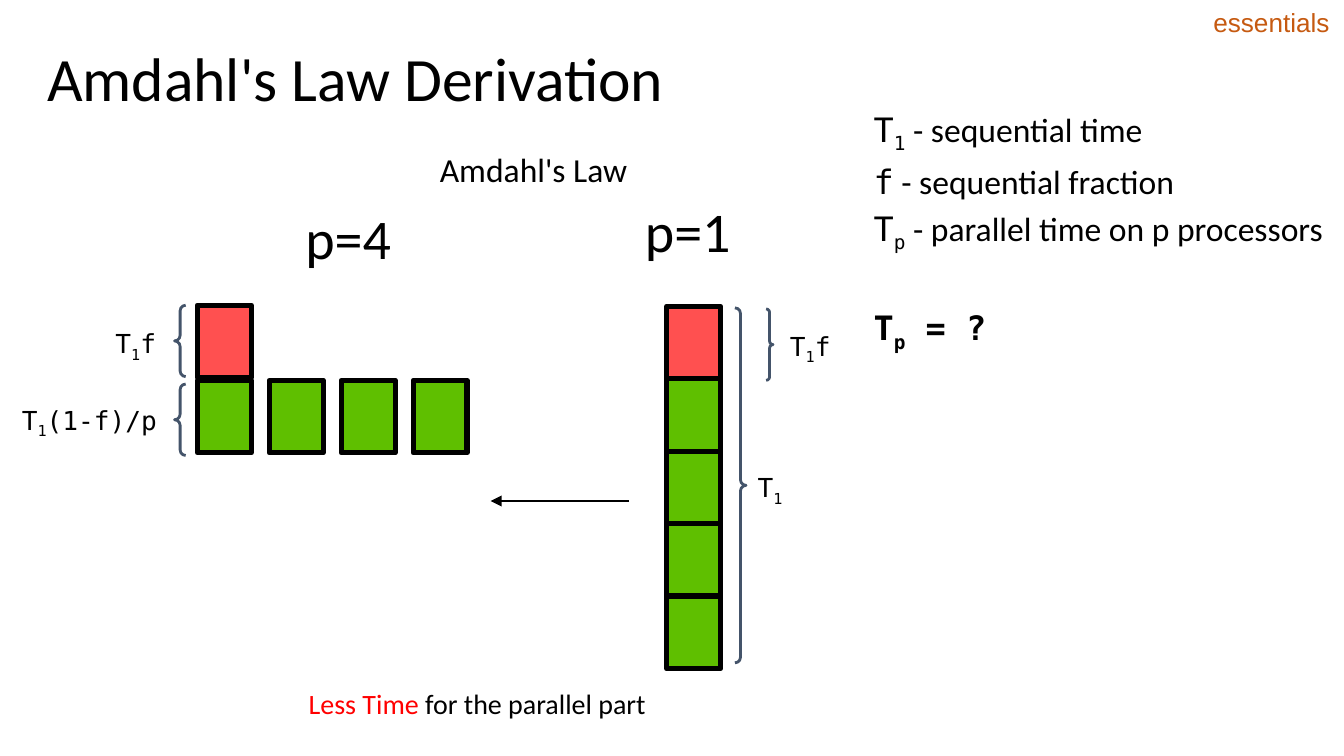
"""Build the Amdahl's Law derivation slide."""
from dataclasses import dataclass

from lxml.etree import SubElement
from pptx import Presentation
from pptx.dml.color import RGBColor
from pptx.enum.shapes import MSO_CONNECTOR, MSO_SHAPE
from pptx.enum.text import MSO_ANCHOR, PP_ALIGN
from pptx.oxml.ns import qn
from pptx.util import Cm, Pt


@dataclass(frozen=True)
class Theme:
    black: RGBColor = RGBColor.from_string("000000")
    sequential: RGBColor = RGBColor.from_string("FF5050")
    parallel: RGBColor = RGBColor.from_string("5FBF00")
    brace: RGBColor = RGBColor.from_string("44546A")
    emphasis: RGBColor = RGBColor.from_string("FF0000")
    tag: RGBColor = RGBColor.from_string("C65A11")
    sans: str = "Calibri"
    mono: str = "DejaVu Sans Mono"
    tag_font: str = "Arial"
    title: Pt = Pt(33)
    heading: Pt = Pt(30)
    body: Pt = Pt(18)
    note: Pt = Pt(15)
    label: Pt = Pt(14)
    thin: Pt = Pt(1.5)
    thick: Pt = Pt(2.83)


theme = Theme()
deck = Presentation()
deck.slide_width, deck.slide_height = Cm(25.4), Cm(14.29)
slide = deck.slides.add_slide(deck.slide_layouts[6])


def add_text(box, lines, size, align=PP_ALIGN.LEFT, spacing=1.0, inset=(0.18, 0.08), wrap=True):
    """Add a text box; each line is a list of (text, font, colour, is_subscript) runs."""
    frame = slide.shapes.add_textbox(*map(Cm, box)).text_frame
    frame.word_wrap = wrap
    frame.margin_left = frame.margin_right = Cm(inset[0])
    frame.margin_top = frame.margin_bottom = Cm(inset[1])
    for index, pieces in enumerate(lines):
        paragraph = frame.paragraphs[0] if index == 0 else frame.add_paragraph()
        paragraph.alignment, paragraph.line_spacing = align, spacing
        for text, font, color, is_subscript in pieces:
            run = paragraph.add_run()
            run.text = text
            run.font.name, run.font.size = font, size
            run.font.color.rgb = color
            if is_subscript:
                run.font._element.set("baseline", "-25000")
    return frame


def symbol(base, subscript="", rest="", rest_font=theme.mono):
    """Return the runs of a monospaced symbol, its subscript and what follows."""
    pieces = [
        (base, theme.mono, theme.black, False),
        (subscript, theme.mono, theme.black, True),
        (rest, rest_font, theme.black, False),
    ]
    return [piece for piece in pieces if piece[0]]


title = add_text((0.71, 0, 23.98, 3.1), [[("Amdahl's Law Derivation", theme.sans, theme.black, False)]],
                 theme.title, spacing=0.9, inset=(0.18, 0.18))
title.vertical_anchor = MSO_ANCHOR.MIDDLE

definitions = add_text(
    (16.33, 1.85, 10.03, 12.93),
    [
        symbol("T", "1", " - sequential time", theme.sans),
        symbol("f", "", " - sequential fraction", theme.sans),
        symbol("T", "p", " - parallel time on p processors", theme.sans),
        symbol("T", "p", " = ?"),
    ],
    theme.body, spacing=1.15)
question = definitions.paragraphs[-1]
question.space_before = Pt(25)
for run in question.runs:
    run.font.bold = True

for text, box, size, align in (
    ("p=1", (12.01, 3.63, 2.31, 1.47), theme.heading, PP_ALIGN.LEFT),
    ("p=4", (5.59, 3.76, 2.08, 1.47), theme.heading, PP_ALIGN.LEFT),
    ("Amdahl's Law", (6.96, 2.74, 6.25, 0.94), theme.body, PP_ALIGN.CENTER),
):
    add_text(box, [[(text, theme.sans, theme.black, False)]], size, align)

add_text((4.55, 12.88, 8.94, 0.84),
         [[("Less Time ", theme.sans, theme.emphasis, False),
           ("for the parallel part", theme.sans, theme.black, False)]],
         theme.note, PP_ALIGN.CENTER, inset=(0.18, 0.1))
add_text((22.68, 0, 2.72, 0.86), [[("essentials", theme.tag_font, theme.tag, False)]],
         theme.label, inset=(0.25, 0.13), wrap=False)

block_width, block_height = 1.02, 1.37
blocks = [(3.73, 5.77, theme.sequential), (12.6, 5.79, theme.sequential)]
blocks += [(3.73 + 1.36 * processor, 7.19, theme.parallel) for processor in range(4)]
blocks += [(12.6, 5.79 + block_height * step, theme.parallel) for step in range(1, 5)]
for left, top, color in blocks:
    block = slide.shapes.add_shape(MSO_SHAPE.RECTANGLE, Cm(left), Cm(top), Cm(block_width), Cm(block_height))
    block.shadow.inherit = False
    block.fill.solid()
    block.fill.fore_color.rgb = color
    block.line.color.rgb = theme.black
    block.line.width = theme.thick

for kind, box in (
    (MSO_SHAPE.LEFT_BRACE, (3.3, 5.77, 0.21, 1.35)),
    (MSO_SHAPE.LEFT_BRACE, (3.3, 7.26, 0.21, 1.35)),
    (MSO_SHAPE.RIGHT_BRACE, (14.48, 5.84, 0.13, 1.35)),
    (MSO_SHAPE.RIGHT_BRACE, (13.89, 5.82, 0.21, 6.71)),
):
    brace = slide.shapes.add_shape(kind, *map(Cm, box))
    brace.adjustments[0] = 0.5
    brace.shadow.inherit = False
    brace.fill.background()
    brace.line.color.rgb = theme.brace
    brace.line.width = theme.thin

for pieces, box, align in (
    (symbol("T", "1"), (14.07, 8.56, 1.24, 1.47), PP_ALIGN.LEFT),
    (symbol("T", "1", "f"), (14.68, 5.89, 1.55, 1.47), PP_ALIGN.LEFT),
    (symbol("T", "1", "(1-f)/p"), (-1.07, 7.29, 4.29, 1.47), PP_ALIGN.RIGHT),
    (symbol("T", "1", "f"), (0.89, 5.84, 2.31, 1.47), PP_ALIGN.RIGHT),
):
    add_text(box, [pieces], theme.label, align, spacing=1.15, inset=(0.25, 0.25))

speedup = slide.shapes.add_connector(MSO_CONNECTOR.STRAIGHT, Cm(11.89), Cm(9.47), Cm(9.27), Cm(9.47))
speedup.line.color.rgb = theme.black
speedup.line.width = theme.thin
SubElement(speedup.line._get_or_add_ln(), qn("a:tailEnd"), type="triangle")
SubElement(speedup._element.spPr, qn("a:effectLst"))

deck.save("out.pptx")
